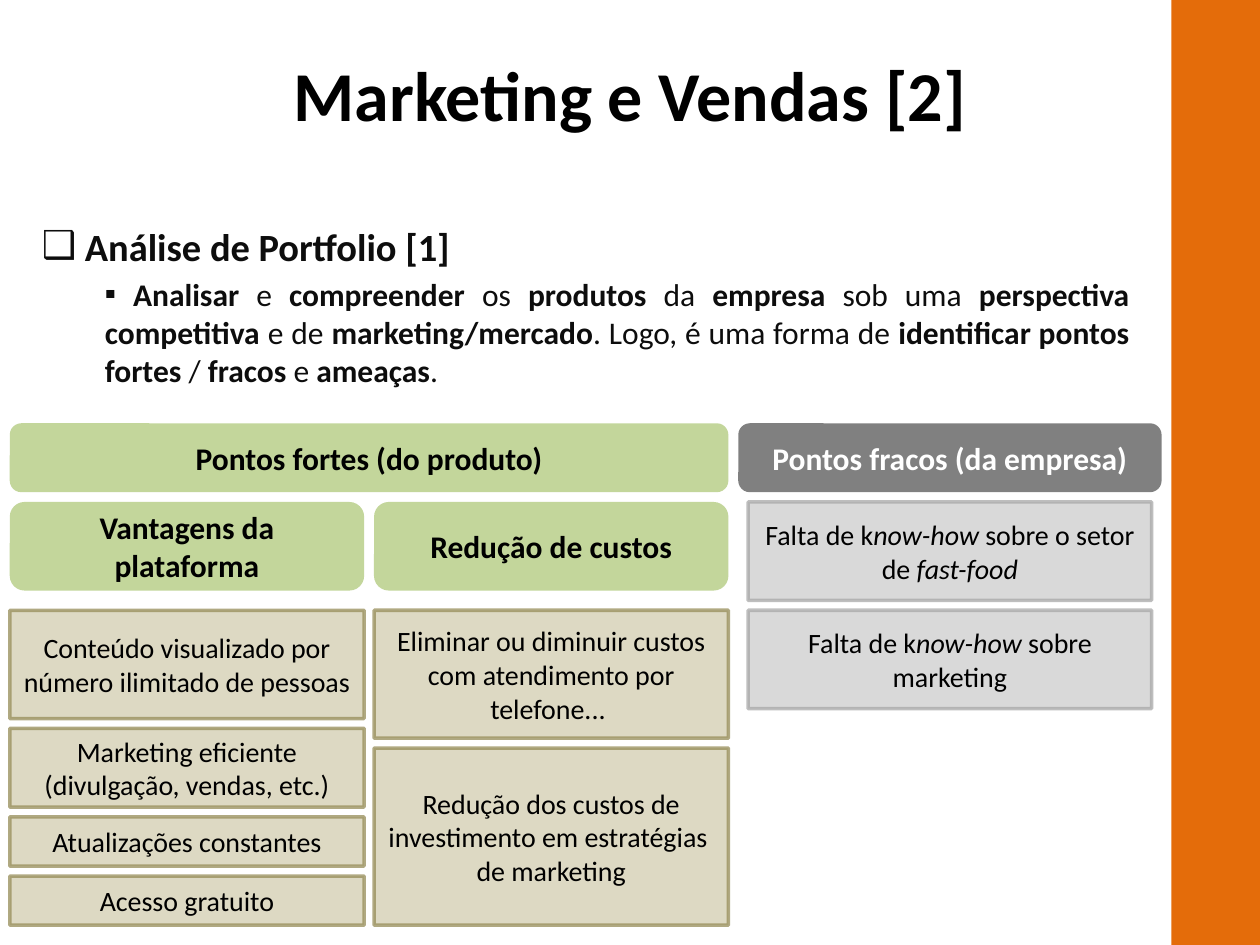
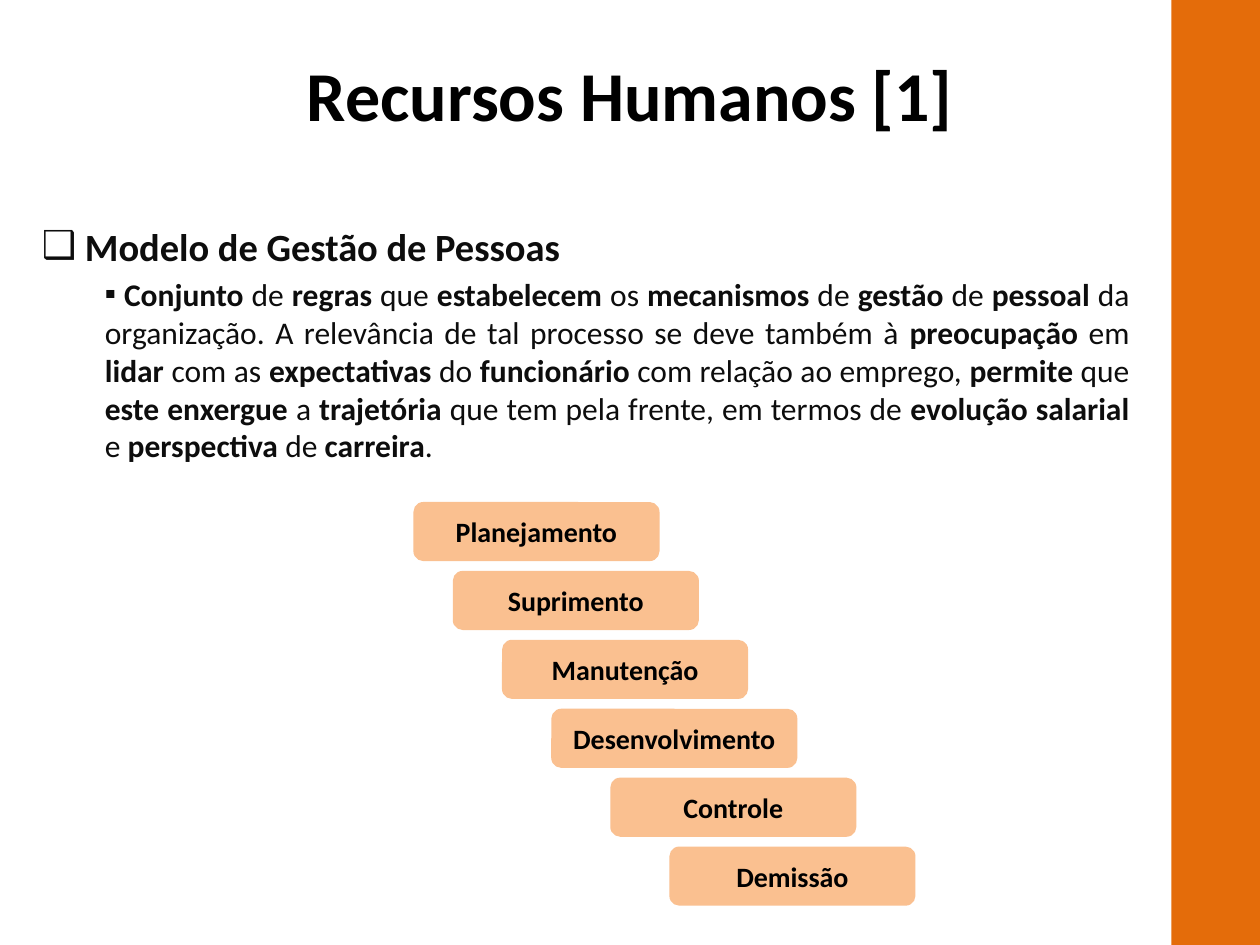
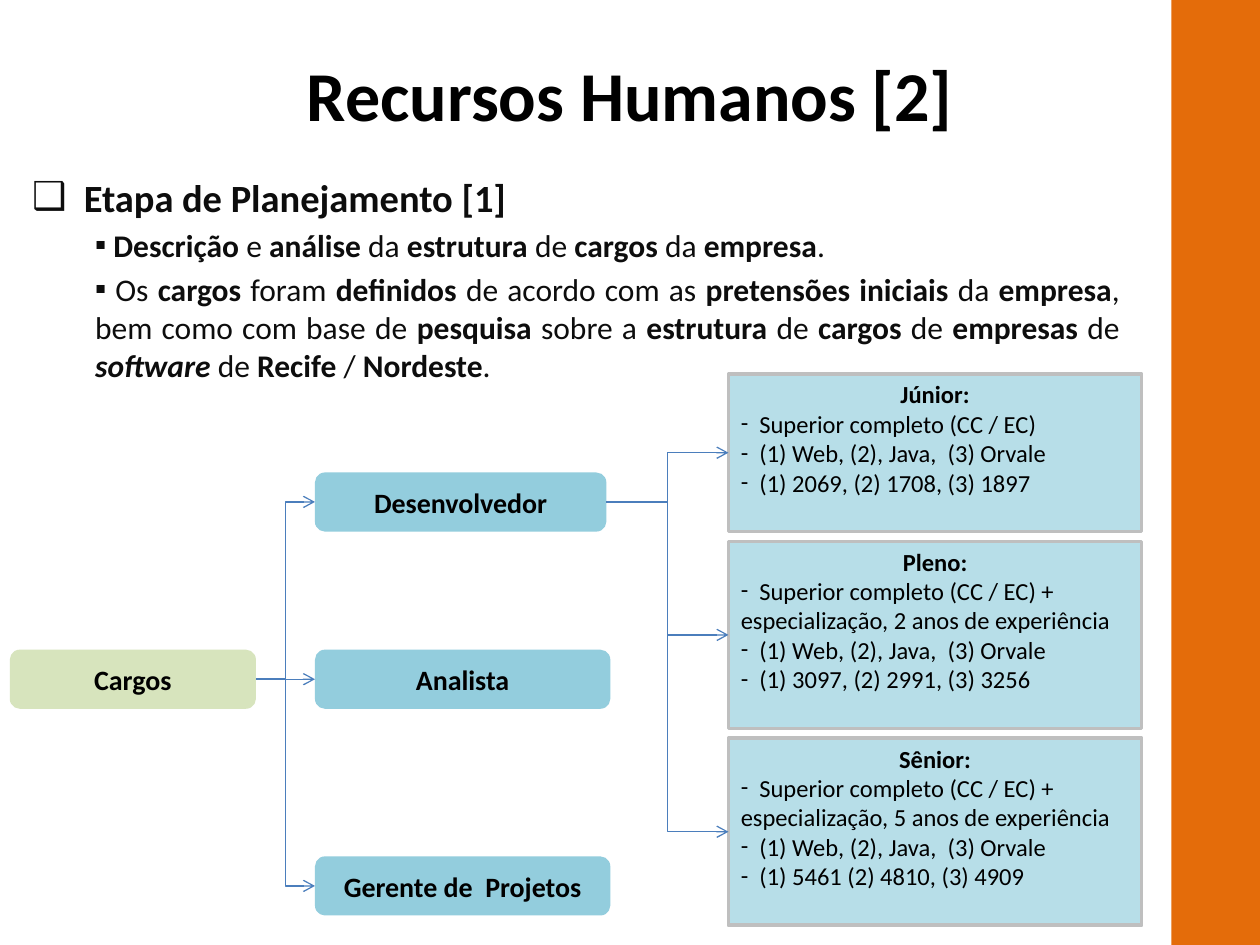
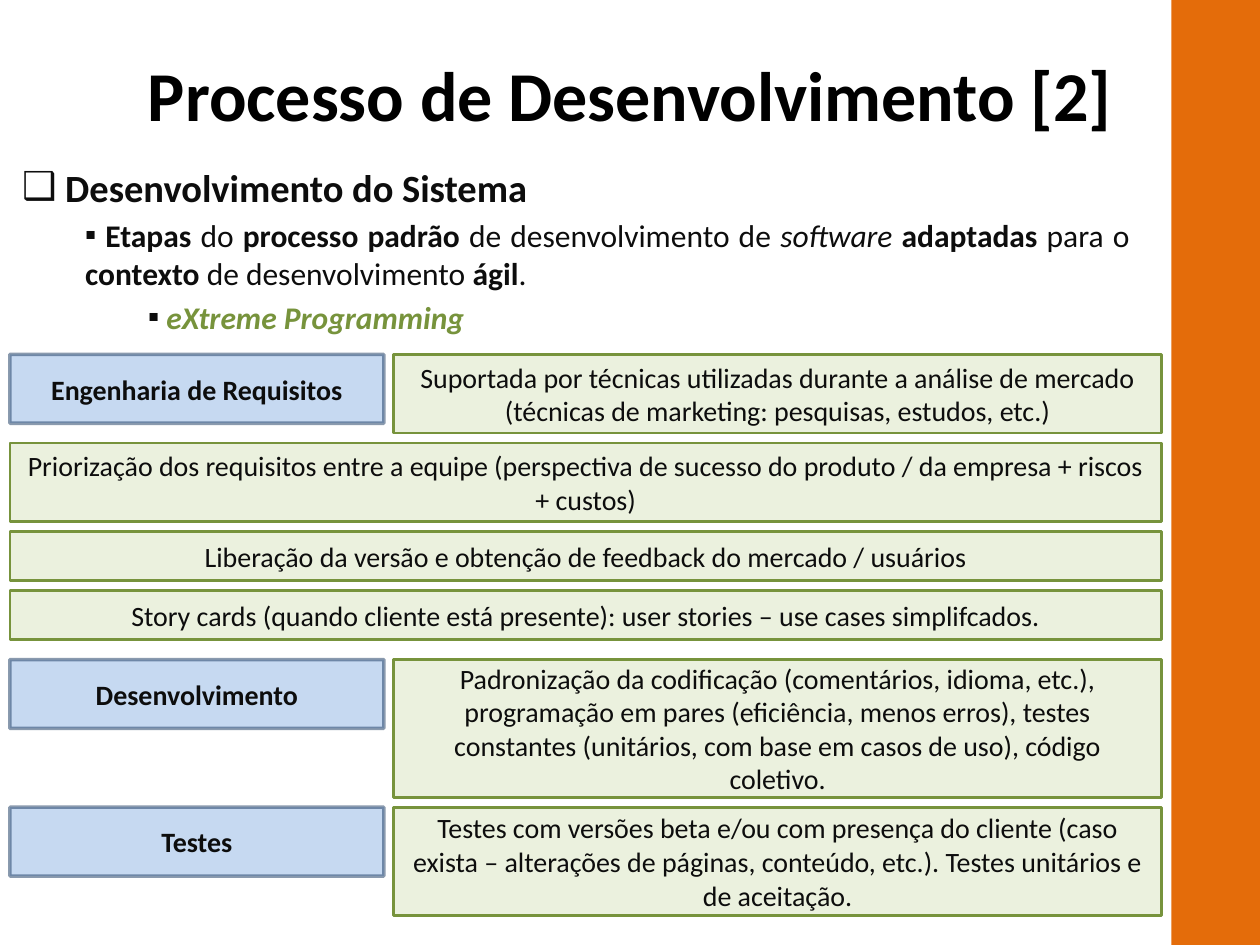
from dataclasses import dataclass

from lxml import etree
from pptx import Presentation
from pptx.dml.color import RGBColor
from pptx.enum.shapes import MSO_CONNECTOR, MSO_SHAPE
from pptx.enum.text import MSO_ANCHOR, PP_ALIGN
from pptx.oxml.ns import qn
from pptx.util import Pt

RECT, ROUND = MSO_SHAPE.RECTANGLE, MSO_SHAPE.ROUNDED_RECTANGLE
ELBOW = MSO_CONNECTOR.ELBOW
TOP, MIDDLE = MSO_ANCHOR.TOP, MSO_ANCHOR.MIDDLE
LEFT, CENTER, JUSTIFY = PP_ALIGN.LEFT, PP_ALIGN.CENTER, PP_ALIGN.JUSTIFY
LEFT_SIDE, RIGHT_SIDE = 1, 3

FONT = "Calibri"
COLORS = {
    "black": "000000", "ink": "0D0D0D", "white": "FFFFFF", "band": "E46C0A",
    "green": "C3D69B", "pale_green": "D7E4BD", "mist": "EBF1DE", "olive": "77933C",
    "beige": "DDD9C3", "khaki": "948A54", "gray": "808080", "light_gray": "D9D9D9",
    "mid_gray": "A6A6A6", "silver": "BFBFBF", "peach": "FAC090", "aqua": "93CDDD",
    "pale_aqua": "B7DEE8", "sky": "C6D9F1", "navy": "17375E", "arrow": "4B7EBC",
}

# The slide is a grid of 128 x 96 square cells; every place below is in cells.
COLUMNS, ROWS = 128, 96
CELL = Pt(720) / COLUMNS
GAP = 1


@dataclass
class Style:
    fill: str
    geometry: int = RECT
    line: str = ""
    line_width: float = 2
    opacity: int = 100
    size: int = 16
    bold: bool = False
    color: str = "black"


STRENGTH = Style("green", ROUND, size=18, bold=True)
WEAKNESS = Style("gray", ROUND, size=18, bold=True, color="white")
STRENGTH_ITEM = Style("beige", line="khaki", opacity=72)
WEAKNESS_ITEM = Style("light_gray", line="mid_gray", opacity=72)
STEP = Style("peach", ROUND, bold=True)
ROOT = Style("pale_green", ROUND, bold=True)
ROLE = Style("aqua", ROUND, bold=True)
LEVEL = Style("pale_aqua", line="silver", size=14)
STAGE = Style("sky", line="navy", opacity=50, bold=True, color="ink")
PRACTICE = Style("mist", line="olive", line_width=1.5, color="ink")

# In running text, * switches bold and _ switches italic.
PORTFOLIO = {
    "title": "Marketing e Vendas [2]",
    "body_at": (3, 22, 113, 76),
    "body": [
        (0, " *Análise de Portfolio [1]*"),
        (1, " *Analisar* e *compreender* os *produtos* da *empresa* sob uma "
            "*perspectiva competitiva* e de *marketing/mercado*. Logo, é uma forma de "
            "*identificar pontos fortes* / *fracos* e *ameaças*."),
    ],
    "headings": [
        ("Pontos fortes (do produto)", STRENGTH, (1, 43, 73, 7)),
        ("Vantagens da plataforma", STRENGTH, (1, 51, 36, 9)),
        ("Redução de custos", STRENGTH, (38, 51, 36, 9)),
        ("Pontos fracos (da empresa)", WEAKNESS, (75, 43, 43, 7)),
    ],
    "columns": [
        (STRENGTH_ITEM, (1, 62, 36), [
            (11, "Conteúdo visualizado por número ilimitado de pessoas"),
            (8, "Marketing eficiente (divulgação, vendas, etc.)"),
            (5, "Atualizações constantes"),
            (5, "Acesso gratuito"),
        ]),
        (STRENGTH_ITEM, (38, 62, 36), [
            (13, "Eliminar ou diminuir custos com atendimento por telefone... "),
            (18, "Redução dos custos de investimento em estratégias  de marketing"),
        ]),
        (WEAKNESS_ITEM, (76, 51, 41), [
            (10, "Falta de k_now-how _sobre o setor de _fast-food_"),
            (10, "Falta de k_now-how _sobre marketing"),
        ]),
    ],
}

PEOPLE = {
    "title": "Recursos Humanos [1]",
    "body_at": (3, 22, 113, 76),
    "body": [
        (0, " *Modelo de Gestão de Pessoas*"),
        (1, " *Conjunto* de *regras* que *estabelecem* os *mecanismos* de *gestão* de "
            "*pessoal* da organização. A relevância de tal processo se deve também à "
            "*preocupação* em *lidar* com as *expectativas* do *funcionário* com relação "
            "ao emprego, *permite* que *este enxergue* a *trajetória* que tem pela "
            "frente, em termos de *evolução salarial* e *perspectiva* de *carreira*."),
    ],
    "steps": [(42, "Planejamento"), (46, "Suprimento"), (51, "Manutenção"),
              (56, "Desenvolvimento"), (62, "Controle"), (68, "Demissão")],
}

JOBS = {
    "title": "Recursos Humanos [2]",
    "body_at": (2, 17, 113, 76),
    "body": [
        (0, "  *Etapa de Planejamento [1]*"),
        (1, " *Descrição* e *análise* da *estrutura* de *cargos* da *empresa*."),
        (1, " Os *cargos* foram *definidos* de acordo com as *pretensões iniciais* da "
            "*empresa*, bem como com base de *pesquisa* sobre a *estrutura* de *cargos* "
            "de *empresas* de *_software_* de *Recife* / *Nordeste*."),
    ],
    "root": ("Cargos", (1, 66, 25, 6)),
    "roles": [
        ("Desenvolvedor", (32, 48, 29.6, 6)),
        ("Analista", (32, 66, 30, 6)),
        ("Gerente de  Projetos", (32, 87, 30, 6)),
    ],
    "levels_at": (74, 38, 42),
    "skills": "(1) Web, (2), Java,  (3) Orvale",
    "levels": [
        (16, "Júnior:", "Superior completo (CC / EC)", "(1) 2069, (2) 1708, (3) 1897"),
        (19, "Pleno:", "Superior completo (CC / EC) + especialização, 2 anos de experiência",
         "(1) 3097, (2) 2991, (3) 3256"),
        (19, "Sênior:", "Superior completo (CC / EC) + especialização, 5 anos de experiência",
         "(1) 5461 (2) 4810, (3) 4909"),
    ],
}

PROCESS = {
    "title": "Processo de Desenvolvimento [2]",
    "body_at": (1, 16, 115, 76),
    "body": [
        (0, " *Desenvolvimento do Sistema*"),
        (1, " *Etapas* do *processo padrão* de desenvolvimento de _software _*adaptadas* "
            "para o *contexto* de desenvolvimento *ágil*."),
        (2, " *_eXtreme Programming_*"),
    ],
    # Each group: top row, then (stage or "", height, practice).
    "groups": [
        (36, [
            ("Engenharia de Requisitos", 8,
             "Suportada por técnicas utilizadas durante a análise de mercado "
             "(técnicas de marketing: pesquisas, estudos, etc.)"),
            ("", 8, "Priorização dos requisitos entre a equipe (perspectiva de sucesso "
                    "do produto / da empresa + riscos + custos)"),
            ("", 5, "Liberação da versão e obtenção de feedback do mercado / usuários"),
            ("", 5, "Story cards (quando cliente está presente): user stories – "
                    "use cases simplifcados."),
        ]),
        (67, [
            ("Desenvolvimento", 14,
             "Padronização da codificação (comentários, idioma, etc.), programação em "
             "pares (eficiência, menos erros), testes constantes (unitários, com base em "
             "casos de uso), código coletivo."),
            ("Testes", 11,
             "Testes com versões beta e/ou com presença do cliente (caso exista – "
             "alterações de páginas, conteúdo, etc.). Testes unitários e de aceitação."),
        ]),
    ],
}

# Bullet, size and colour by outline level
OUTLINE = [("❑", 22, "ink"), ("▪", 18, "ink"), ("▪", 18, "olive")]


def rgb(name):
    return RGBColor.from_string(COLORS[name])


def cells(*place):
    return [round(n * CELL) for n in place]


def split_markup(text):
    """Yield (piece, bold, italic) for text marked with * and _."""
    for i, bold_part in enumerate(text.split("*")):
        for j, piece in enumerate(bold_part.split("_")):
            if piece:
                yield piece, i % 2 == 1, j % 2 == 1


def write(paragraph, text, size, color, bold=False, align=CENTER):
    paragraph.alignment = align
    for piece, strong, italic in split_markup(text):
        run = paragraph.add_run()
        run.text = piece
        font = run.font
        font.name, font.size = FONT, Pt(size)
        font.bold, font.italic = bold or strong, italic
        font.color.rgb = rgb(color)


def set_bullet(paragraph, char, margin=0):
    props = paragraph._p.get_or_add_pPr()
    props.set("marL", str(margin))
    props.set("indent", "0")
    etree.SubElement(props, qn("a:buFont")).set("typeface", FONT)
    etree.SubElement(props, qn("a:buChar")).set("char", char)


def add_text_frame(slide, place, anchor):
    frame = slide.shapes.add_textbox(*cells(*place)).text_frame
    frame.word_wrap = True
    frame.vertical_anchor = anchor
    return frame


def add_box(slide, style, place, text=""):
    box = slide.shapes.add_shape(style.geometry, *cells(*place))
    box.shadow.inherit = False
    box.fill.solid()
    box.fill.fore_color.rgb = rgb(style.fill)
    if style.line:
        box.line.color.rgb = rgb(style.line)
        box.line.width = Pt(style.line_width)
        if style.opacity < 100:
            line_color = box._element.spPr.find(qn("a:ln")).find(".//" + qn("a:srgbClr"))
            etree.SubElement(line_color, qn("a:alpha")).set("val", str(style.opacity * 1000))
    else:
        box.line.fill.background()
    frame = box.text_frame
    frame.word_wrap = True
    frame.vertical_anchor = MIDDLE
    write(frame.paragraphs[0], text, style.size, style.color, style.bold)
    return box


def add_arrow(slide, source, target):
    arrow = slide.shapes.add_connector(ELBOW, 0, 0, 0, 0)
    arrow.begin_connect(source, RIGHT_SIDE)
    arrow.end_connect(target, LEFT_SIDE)
    arrow.line.color.rgb = rgb("arrow")
    arrow.line.width = Pt(0.75)
    props = arrow._element.spPr
    etree.SubElement(props.find(qn("a:ln")), qn("a:tailEnd")).set("type", "arrow")
    etree.SubElement(props, qn("a:effectLst"))


def stack(top, heights):
    """Yield the top of each height, one below the other."""
    for height in heights:
        yield top
        top += height + GAP


def add_base(deck, content):
    """Add a slide with title, outline text and side band."""
    slide = deck.slides.add_slide(deck.slide_layouts[6])
    title = add_text_frame(slide, (3, 2, 122, 15), MIDDLE)
    write(title.paragraphs[0], content["title"], 40, "black", bold=True)

    body = add_text_frame(slide, content["body_at"], TOP)
    for i, (level, text) in enumerate(content["body"]):
        paragraph = body.add_paragraph() if i else body.paragraphs[0]
        char, size, color = OUTLINE[level]
        paragraph.level = level
        paragraph.space_before = Pt(size * 0.2)
        # The bullet takes its colour from the leading space.
        write(paragraph, text[:1], size, "ink", align=JUSTIFY)
        write(paragraph, text[1:], size, color, align=JUSTIFY)
        set_bullet(paragraph, char, Pt(36 * level))

    add_box(slide, Style("band"), (119, 0, 9, ROWS))
    return slide


def add_portfolio(deck):
    slide = add_base(deck, PORTFOLIO)
    for text, style, place in PORTFOLIO["headings"]:
        add_box(slide, style, place, text)
    for style, (left, top, width), items in PORTFOLIO["columns"]:
        for y, (height, text) in zip(stack(top, [h for h, _ in items]), items):
            add_box(slide, style, (left, y, width, height), text)


def add_people(deck):
    slide = add_base(deck, PEOPLE)
    steps = PEOPLE["steps"]
    for y, (left, text) in zip(stack(51, [6] * len(steps)), steps):
        add_box(slide, STEP, (left, y, 25, 6), text)


def add_jobs(deck):
    slide = add_base(deck, JOBS)
    root_text, root_place = JOBS["root"]
    root = add_box(slide, ROOT, root_place, root_text)
    roles = [add_box(slide, ROLE, place, text) for text, place in JOBS["roles"]]
    for role in roles:
        add_arrow(slide, root, role)

    left, top, width = JOBS["levels_at"]
    levels = JOBS["levels"]
    for y, (height, name, degree, pay) in zip(stack(top, [lv[0] for lv in levels]), levels):
        level = add_box(slide, LEVEL, (left, y, width, height), f"*{name}*")
        frame = level.text_frame
        frame.vertical_anchor = TOP
        frame.margin_top = Pt(3)
        for line in (degree, JOBS["skills"], pay):
            paragraph = frame.add_paragraph()
            write(paragraph, "  " + line, LEVEL.size, LEVEL.color, align=LEFT)
            set_bullet(paragraph, "-")
        add_arrow(slide, roles[0], level)


def add_process(deck):
    slide = add_base(deck, PROCESS)
    for top, rows in PROCESS["groups"]:
        for y, (stage, height, practice) in zip(stack(top, [r[1] for r in rows]), rows):
            if stage:
                add_box(slide, STAGE, (1, y, 38, 7), stage)
            left = 40 if stage else 1
            add_box(slide, PRACTICE, (left, y, 118 - left, height), practice)


def main():
    deck = Presentation()
    deck.slide_width, deck.slide_height = cells(COLUMNS, ROWS)
    for add_slide in (add_portfolio, add_people, add_jobs, add_process):
        add_slide(deck)
    deck.save("out.pptx")


if __name__ == "__main__":
    main()
